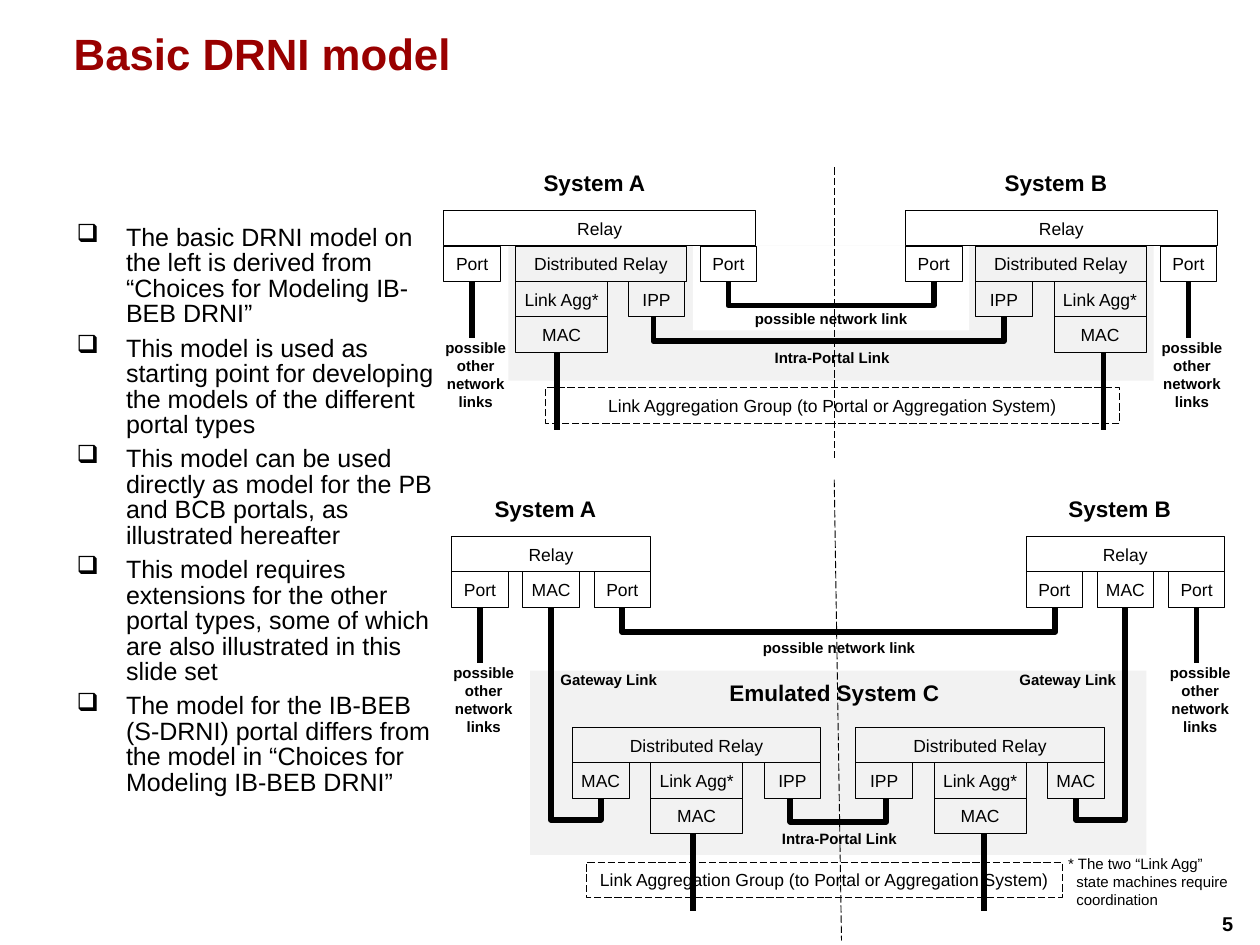
"""Build the slide on the basic DRNI model."""
from lxml import etree
from pptx import Presentation
from pptx.dml.color import RGBColor
from pptx.enum.dml import MSO_LINE
from pptx.enum.shapes import MSO_CONNECTOR, MSO_SHAPE
from pptx.enum.text import MSO_ANCHOR as ANCHOR, PP_ALIGN as ALIGN
from pptx.oxml.ns import qn
from pptx.util import Pt

BLACK, WHITE, GREY, RED = "000000", "FFFFFF", "F2F2F2", "990000"
ROW, PORT, AGG = 28.3, 45.4, 73.5
THICK = 4.5
POINTS = [
    "The basic DRNI model on the left is derived from “Choices for Modeling IB-BEB DRNI”",
    "This model is used as starting point for developing the models of the different portal types",
    "This model can be used directly as model for the PB and BCB portals, as illustrated hereafter",
    "This model requires extensions for the other portal types, some of which are also "
    "illustrated in this slide set",
    "The model for the IB-BEB (S-DRNI) portal differs from the model in “Choices for "
    "Modeling IB-BEB DRNI”",
]


def color(hex_value):
    """Turn a hex string into a colour."""
    return RGBColor.from_string(hex_value)


def write(sp, *texts, size=14, bold=False, rgb=BLACK, align=ALIGN.CENTER,
          anchor=ANCHOR.MIDDLE, inset=(0, 0), wrap=False, hanging=None,
          bullet=None, spacing=None, before=None):
    """Write one paragraph per text into a shape."""
    tf = sp.text_frame
    tf.word_wrap = wrap
    tf.vertical_anchor = anchor
    tf.margin_left = tf.margin_right = Pt(inset[0])
    tf.margin_top = tf.margin_bottom = Pt(inset[1])
    for i, text in enumerate(texts):
        p = tf.add_paragraph() if i else tf.paragraphs[0]
        p.alignment, p.line_spacing = align, spacing
        if before:
            p.space_before = Pt(before)
        r = p.add_run()
        r.text = text
        r.font.name, r.font.size, r.font.bold = "Arial", Pt(size), bold
        r.font.color.rgb = color(rgb)
        pPr = p._p.get_or_add_pPr()
        if hanging:
            pPr.set("marL", str(Pt(hanging[0])))
            pPr.set("indent", str(-Pt(hanging[1])))
        if bullet:
            etree.SubElement(pPr, qn("a:buChar")).set("char", bullet)


def add_text(s, x, y, w, h, *texts, **fmt):
    """Add a text box."""
    sp = s.shapes.add_textbox(Pt(x), Pt(y), Pt(w), Pt(h))
    write(sp, *texts, **fmt)


def add_label(s, x, y, w, text, size=12):
    """Add a bold one-line label."""
    add_text(s, x, y, w, size * 1.2, text, size=size, bold=True)


def style_line(line, width, dashed=False):
    """Give a line its colour, width and dash."""
    line.color.rgb = color(BLACK)
    line.width = Pt(width)
    if dashed:
        line.dash_style = MSO_LINE.LONG_DASH


def add_area(s, x, y, w, h, fill):
    """Add a plain background area."""
    sp = s.shapes.add_shape(MSO_SHAPE.RECTANGLE, Pt(x), Pt(y), Pt(w), Pt(h))
    sp.shadow.inherit = False
    sp.fill.solid()
    sp.fill.fore_color.rgb = color(fill)
    sp.line.fill.background()


def add_box(s, x, y, w, text, dashed=False):
    """Add an outlined box, one row high, and return it."""
    sp = s.shapes.add_shape(MSO_SHAPE.RECTANGLE, Pt(x), Pt(y), Pt(w), Pt(ROW))
    sp.shadow.inherit = False
    sp.fill.background()
    style_line(sp.line, 0.75, dashed)
    write(sp, text)
    return sp


def add_line(s, x1, y1, x2, y2, width=THICK, dashed=False, start=None):
    """Add a straight line, joined to the bottom of start if given."""
    c = s.shapes.add_connector(MSO_CONNECTOR.STRAIGHT, Pt(x1), Pt(y1), Pt(x2), Pt(y2))
    style_line(c.line, width, dashed)
    etree.SubElement(c._element.spPr, qn("a:effectLst"))
    if start is not None:
        c.begin_connect(start, 2)


def add_link(s, x1, y1, x2, y2, low):
    """Add a thick U-shaped link that runs down to low."""
    builder = s.shapes.build_freeform(Pt(x1), Pt(y1))
    corners = [(x1, low), (x2, low), (x2, y2)]
    builder.add_line_segments([(Pt(x), Pt(y)) for x, y in corners], close=False)
    sp = builder.convert_to_shape()
    sp.shadow.inherit = False
    sp.fill.background()
    style_line(sp.line, THICK)


def add_outer_port(s, x, y):
    """Add a port with its other network links below."""
    port = add_box(s, x, y, PORT, "Port")
    mid, bottom = x + PORT / 2, y + ROW
    add_line(s, mid, bottom, mid, bottom + 45, start=port)
    add_text(s, x - 11.5, bottom + 45, 74.2, 58.3, "possible other network links",
             size=12, bold=True, wrap=True)


def add_aggregation(s, x, y, drop, length):
    """Add a Link Agg box, its MAC and the aggregated link."""
    add_box(s, x, y, AGG, "Link Agg*")
    add_box(s, x, y + ROW, AGG, "MAC")
    add_line(s, drop, y + 2 * ROW, drop, y + 2 * ROW + length)


def add_group(s, x, y, w):
    """Add the dashed link aggregation group."""
    add_box(s, x, y, w, "Link Aggregation Group (to Portal or Aggregation System)", dashed=True)


def draw_basic_model(s):
    """Draw the upper model of two systems."""
    top = 168.5
    second, third = top + ROW, top + 2 * ROW
    sides = [
        ("System A", 355, 355, 560, 412.6, 412.6, 502.6, 445.7),
        ("System B", 724.3, 928, 724.3, 780.5, 843.3, 780.5, 882.7),
    ]
    for name, relay, outer, inner, dist, agg, ipp, drop in sides:
        add_label(s, relay + 79.5, 135.4, 82, name, size=18)
        add_box(s, relay, top, 249.5, "Relay")
        add_outer_port(s, outer, second)
        add_box(s, inner, second, PORT, "Port")
        add_box(s, dist, second, 136.4, "Distributed Relay")
        add_box(s, ipp, third, PORT, "IPP")
        add_aggregation(s, agg, third, drop, 62.5)
    add_link(s, 582.7, third, 747, third, 244.5)
    add_link(s, 522.7, third + ROW, 803, third + ROW, 273)
    add_label(s, 603.4, 247.7, 123, "possible network link")
    add_label(s, 619.2, 278.6, 93, "Intra-Portal Link")
    add_group(s, 436.3, 310.3, 459.4)
    add_line(s, 667.4, 134, 667.4, 366.5, 0.75, dashed=True)


def draw_emulated_model(s):
    """Draw the lower model with an emulated third system."""
    top, dist_top = 429.1, 582
    second, units = top + ROW, dist_top + ROW
    ports_end, units_end = second + ROW, units + ROW
    step = 56.9
    sides = [("System A", 361.4, 0, 2), ("System B", 820.8, 2, 0)]
    for name, relay, outer, inner in sides:
        add_label(s, relay + 33.9, 396, 82, name, size=18)
        add_box(s, relay, top, 158.8, "Relay")
        add_outer_port(s, relay + outer * step, second)
        add_box(s, relay + step, second, PORT, "MAC")
        add_box(s, relay + inner * step, second, PORT, "Port")
    halves = [(457.9, "MAC", "IPP", 554.4), (684.7, "IPP", "MAC", 787)]
    for x, left, right, drop in halves:
        add_box(s, x, dist_top, 198.8, "Distributed Relay")
        add_box(s, x, units, PORT, left)
        add_box(s, x + 153.4, units, PORT, right)
        add_aggregation(s, x + 62.7, units, drop, 62)
    add_link(s, 632.2, units_end, 709, units_end, 657.4)
    add_link(s, 497.5, ports_end, 844.2, ports_end, 505.4)
    add_link(s, 440.6, ports_end, 480.6, units_end, 655.9)
    add_link(s, 900, ports_end, 860.8, units_end, 655.9)
    add_label(s, 625, 663.8, 93, "Intra-Portal Link")
    add_label(s, 609.8, 511.2, 123, "possible network link")
    for x in (447.8, 815):
        add_label(s, x, 536.4, 78.5, "Gateway Link")
    add_label(s, 582.5, 543.6, 170, "Emulated System C", size=18)
    add_group(s, 469.4, 689.8, 380.2)
    add_line(s, 667.4, 383.8, 673.2, 752.4, 0.75, dashed=True)


def main():
    """Build and save the slide."""
    prs = Presentation()
    prs.slide_width, prs.slide_height = Pt(1008), Pt(756)
    s = prs.slides.add_slide(prs.slide_layouts[6])
    block = dict(align=ALIGN.LEFT, anchor=ANCHOR.TOP, inset=(8.6, 4.3))
    add_area(s, 406.8, 196.6, 516.2, 108, GREY)
    add_area(s, 554.4, 196.6, 221, 67.7, WHITE)
    add_area(s, 424, 536.4, 493.2, 147.6, GREY)
    add_text(s, 50.4, 17.3, 907.2, 95, "Basic DRNI model",
             size=35, bold=True, rgb=RED, wrap=True, **block)
    add_text(s, 50.4, 176.4, 317.5, 499, *POINTS, size=20, wrap=True, bullet="❑",
             hanging=(41.8, 39.6), spacing=0.85, before=7, **block)
    draw_basic_model(s)
    draw_emulated_model(s)
    add_text(s, 854.6, 684, 136, 44, "* The two “Link Agg” state machines require coordination",
             size=12, align=ALIGN.LEFT, anchor=ANCHOR.TOP, wrap=True, hanging=(6.5, 6.5))
    add_text(s, 969.1, 725, 37.4, 28, "5", size=16, bold=True, **block)
    prs.save("out.pptx")


if __name__ == "__main__":
    main()
